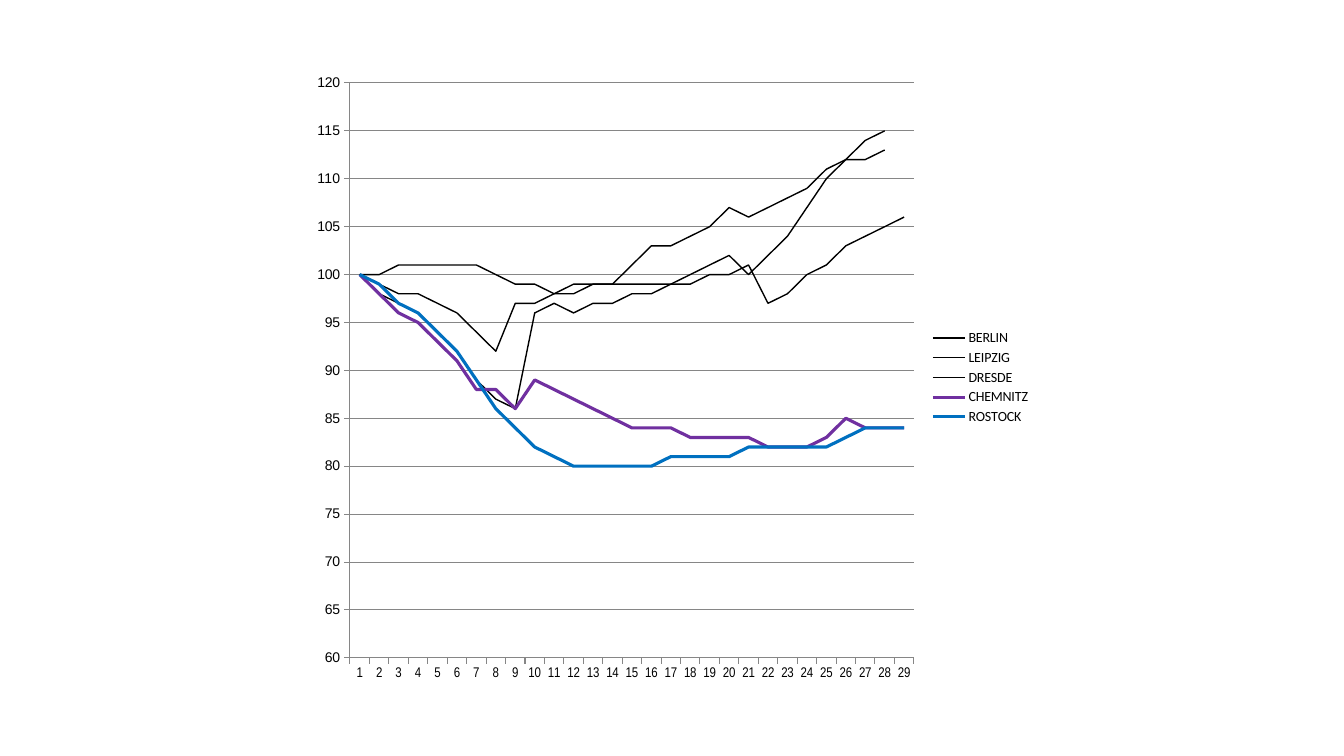
from lxml import etree
from pptx import Presentation
from pptx import util as u
from pptx.chart import data as cd
from pptx.dml.color import RGBColor
from pptx.enum import chart as ch
from pptx.oxml import ns

PX = 914400 / 100.8
BLACK = RGBColor(0x00, 0x00, 0x00)
GREY = RGBColor(0x86, 0x86, 0x86)
PURPLE = RGBColor(0x70, 0x30, 0xA0)
BLUE = RGBColor(0x00, 0x70, 0xC0)

CHART_BOX = (303, 62, 738, 631)
PLOT_BOX = (350, 83, 564, 575)
YEARS = [str(year) for year in range(1, 30)]
CITIES = [
    ("BERLIN", BLACK, 1,
     [100, 100, 101, 101, 101, 101, 101, 100, 99, 99, 98, 99, 99, 99, 99,
      99, 99, 99, 100, 100, 101, 97, 98, 100, 101, 103, 104, 105, 106]),
    ("LEIPZIG", BLACK, 1,
     [100, 98, 97, 96, 94, 92, 89, 87, 86, 96, 97, 96, 97, 97, 98,
      98, 99, 100, 101, 102, 100, 102, 104, 107, 110, 112, 114, 115, None]),
    ("DRESDE", BLACK, 1,
     [100, 99, 98, 98, 97, 96, 94, 92, 97, 97, 98, 98, 99, 99, 101,
      103, 103, 104, 105, 107, 106, 107, 108, 109, 111, 112, 112, 113, None]),
    ("CHEMNITZ", PURPLE, 2.25,
     [100, 98, 96, 95, 93, 91, 88, 88, 86, 89, 88, 87, 86, 85, 84,
      84, 84, 83, 83, 83, 83, 82, 82, 82, 83, 85, 84, 84, 84]),
    ("ROSTOCK", BLUE, 2.25,
     [100, 99, 97, 96, 94, 92, 89, 86, 84, 82, 81, 80, 80, 80, 80,
      80, 81, 81, 81, 81, 82, 82, 82, 82, 82, 83, 84, 84, 84]),
]
VALUE_SCALE = {
    "minimum_scale": 60,
    "maximum_scale": 120,
    "major_unit": 5,
    "has_major_gridlines": True,
    "major_tick_mark": ch.XL_TICK_MARK.OUTSIDE,
}
YEAR_SCALE = {
    "has_major_gridlines": False,
    "major_tick_mark": ch.XL_TICK_MARK.OUTSIDE,
    "tick_label_position": ch.XL_TICK_LABEL_POSITION.LOW,
}
LEGEND_FORMAT = {
    "position": ch.XL_LEGEND_POSITION.RIGHT,
    "include_in_layout": False,
}


def px(length):
    return u.Emu(round(length * PX))


def apply(target, values):
    for name, value in values.items():
        setattr(target, name, value)


def style_font(font, face):
    apply(font, {"name": face, "size": u.Pt(10), "bold": False})
    font.color.rgb = BLACK


def style_line(line, colour, width):
    line.color.rgb = colour
    line.width = u.Pt(width)


def style_axis(axis, scale, face):
    apply(axis, scale)
    style_font(axis.tick_labels.font, face)
    style_line(axis.format.line, GREY, 0.75)


def place_plot(chart):
    plot_area = chart.plots[0]._element.getparent()
    for layout in plot_area.findall(ns.qn("c:layout")):
        plot_area.remove(layout)
    layout = etree.Element(ns.qn("c:layout"))
    plot_area.insert(0, layout)
    manual = etree.SubElement(layout, ns.qn("c:manualLayout"))
    left, top, width, height = CHART_BOX
    x, y, w, h = PLOT_BOX
    parts = {
        "layoutTarget": "inner", "xMode": "edge", "yMode": "edge",
        "x": (x - left) / width, "y": (y - top) / height,
        "w": w / width, "h": h / height,
    }
    for name, value in parts.items():
        etree.SubElement(manual, ns.qn("c:" + name)).set("val", str(value))


def add_city_chart(slide):
    population = cd.CategoryChartData(number_format="0")
    population.categories = YEARS
    for name, _, _, values in CITIES:
        population.add_series(name, values)
    chart = slide.shapes.add_chart(
        ch.XL_CHART_TYPE.LINE, *map(px, CHART_BOX), population).chart
    apply(chart, {"has_title": False, "has_legend": True})
    style_font(chart.font, "Calibri")
    apply(chart.legend, LEGEND_FORMAT)
    style_font(chart.legend.font, "Calibri")
    style_axis(chart.category_axis, YEAR_SCALE, "Arial Narrow")
    style_axis(chart.value_axis, VALUE_SCALE, "Arial")
    apply(chart.value_axis.tick_labels,
          {"number_format": "0", "number_format_is_linked": False})
    style_line(chart.value_axis.major_gridlines.format.line, GREY, 0.75)
    plot = chart.plots[0]
    plot.vary_by_categories = False
    for city, (_, colour, width, _) in zip(plot.series, CITIES):
        city.smooth = False
        city.marker.style = ch.XL_MARKER_STYLE.NONE
        style_line(city.format.line, colour, width)
    place_plot(chart)


def main():
    deck = Presentation()
    apply(deck, {"slide_width": px(1344), "slide_height": px(756)})
    slide = deck.slides.add_slide(deck.slide_layouts[6])
    add_city_chart(slide)
    deck.save("out.pptx")


if __name__ == "__main__":
    main()
